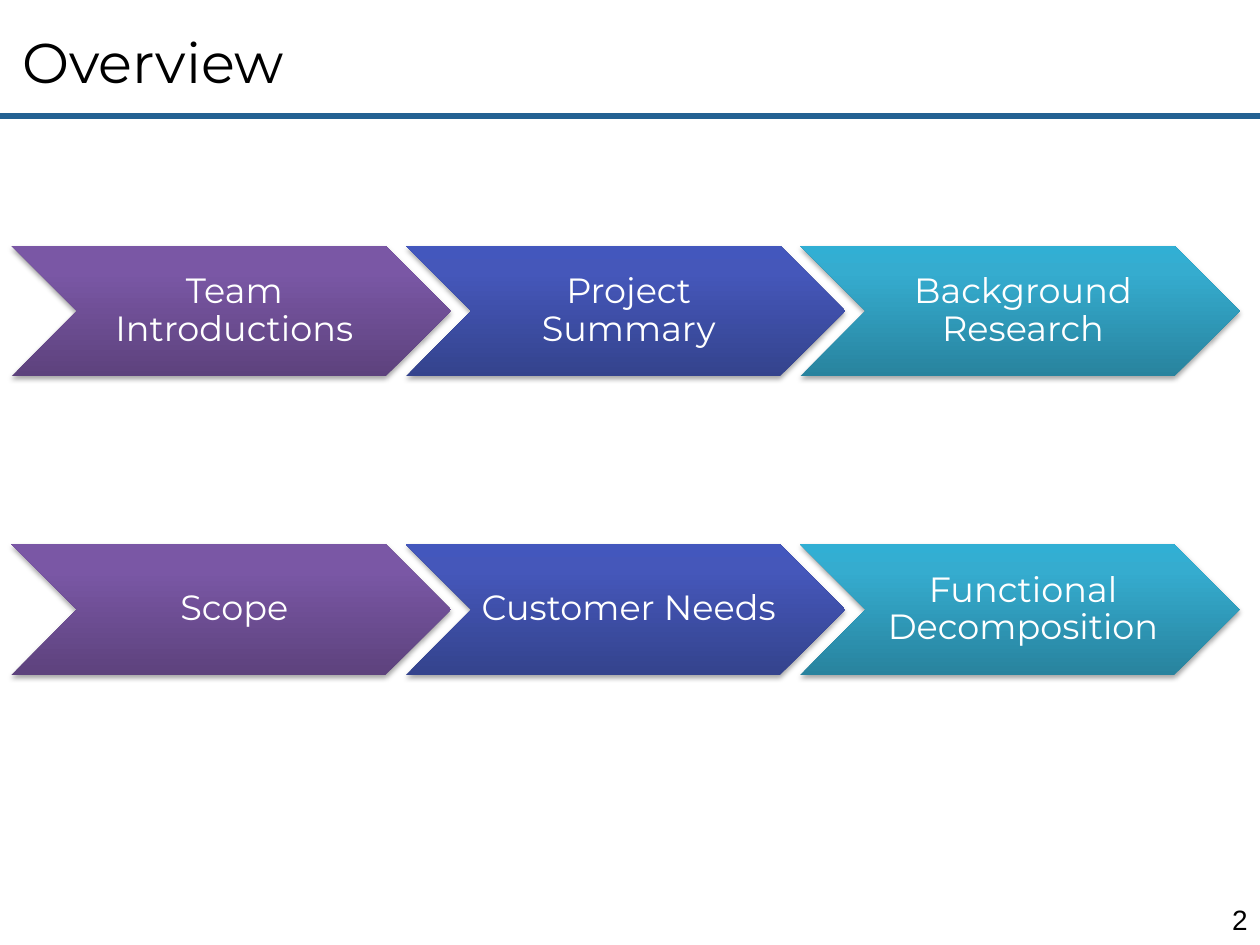
from copy import deepcopy

from lxml import etree
from pptx import Presentation
from pptx.dml.color import RGBColor
from pptx.enum import shapes, text
from pptx.oxml import ns
from pptx.util import Cm, Pt

BLACK = RGBColor(0x00, 0x00, 0x00)
WHITE = RGBColor(0xFF, 0xFF, 0xFF)
RULE_BLUE = RGBColor(0x23, 0x61, 0x92)
PURPLE = [RGBColor.from_string(c) for c in ("5D427D", "7A57A5", "7A56A7")]
INDIGO = [RGBColor.from_string(c) for c in ("34438D", "4557BA", "4357BD")]
CYAN = [RGBColor.from_string(c) for c in ("28839E", "35ACCF", "31AFD4")]

TITLE = "Overview"
PAGE_NUMBER = "2"
ROWS = [
    (10.97, ["Scope", "Customer Needs", "Functional Decomposition"]),
    (4.95, ["Team Introductions", "Project Summary", "Background Research"]),
]
GRADIENTS = [PURPLE, INDIGO, CYAN]
STOPS = [0, 0.8, 1]

LEFT, STEP = 0.23, 7.95
WIDTH, HEIGHT = 8.86, 2.64
NOTCH = HEIGHT / 2

MIDDLE = text.MSO_ANCHOR.MIDDLE
STEP_FRAME = dict(vertical_anchor=MIDDLE, margin_left=Cm(0.2), margin_right=Cm(0.07),
                  margin_top=Cm(0.07), margin_bottom=Cm(0.07))
STEP_PARA = dict(alignment=text.PP_ALIGN.CENTER, line_spacing=0.9)


def apply(target, values):
    for name, value in values.items():
        setattr(target, name, value)


def add_text(parent, place, words, font, size, color, frame=None, para=None):
    box = parent.shapes.add_textbox(*map(Cm, place)).text_frame
    apply(box, {"word_wrap": True, **(frame or {})})
    apply(box.paragraphs[0], para or {})
    span = box.paragraphs[0].add_run()
    span.text = words
    apply(span.font, dict(name=font, size=Pt(size)))
    span.font.color.rgb = color


def add_shadow(shape):
    shape.shadow.inherit = False
    effects = shape._element.spPr.find(ns.qn("a:effectLst"))
    shadow = etree.SubElement(effects, ns.qn("a:outerShdw"), blurRad=str(Pt(3.1)),
                              dist=str(Pt(1.8)), dir="5400000", rotWithShape="0")
    color = etree.SubElement(shadow, ns.qn("a:srgbClr"), val=str(BLACK))
    etree.SubElement(color, ns.qn("a:alpha"), val="35000")


def add_chevron(group, place, colors):
    chevron = group.shapes.add_shape(shapes.MSO_SHAPE.CHEVRON, *map(Cm, place))
    chevron.line.fill.background()
    chevron.fill.gradient()
    chevron.fill.gradient_angle = 90
    stop_list = chevron._element.spPr.find(".//" + ns.qn("a:gsLst"))
    stop_list.append(deepcopy(stop_list[0]))
    for stop, position, color in zip(chevron.fill.gradient_stops, STOPS, colors):
        stop.position = position
        stop.color.rgb = color
    add_shadow(chevron)


def main():
    deck = Presentation()
    deck.slide_width, deck.slide_height = Cm(25.4), Cm(19.05)
    page = deck.slides.add_slide(deck.slide_layouts[6])

    rule = page.shapes.add_connector(shapes.MSO_CONNECTOR.STRAIGHT,
                                     0, Cm(2.34), deck.slide_width, Cm(2.34))
    rule.line.color.rgb = RULE_BLUE
    rule.line.width = Pt(3.5)
    etree.SubElement(rule._element.spPr, ns.qn("a:effectLst"))

    add_text(page, (24.13, 18.03, 1.27, 1.02), PAGE_NUMBER, "Arial", 16, BLACK,
             dict(vertical_anchor=MIDDLE), dict(alignment=text.PP_ALIGN.RIGHT))
    add_text(page, (0.2, 0.43, 10.16, 1.63), TITLE, "Montserrat", 32, BLACK)

    for top, labels in ROWS:
        group = page.shapes.add_group_shape()
        for column, (label, colors) in enumerate(zip(labels, GRADIENTS)):
            left = LEFT + column * STEP
            add_chevron(group, (left, top, WIDTH, HEIGHT), colors)
            add_text(group, (left + NOTCH, top, WIDTH - 2 * NOTCH, HEIGHT), label,
                     "Montserrat", 20, WHITE, STEP_FRAME, STEP_PARA)

    deck.save("out.pptx")


if __name__ == "__main__":
    main()
